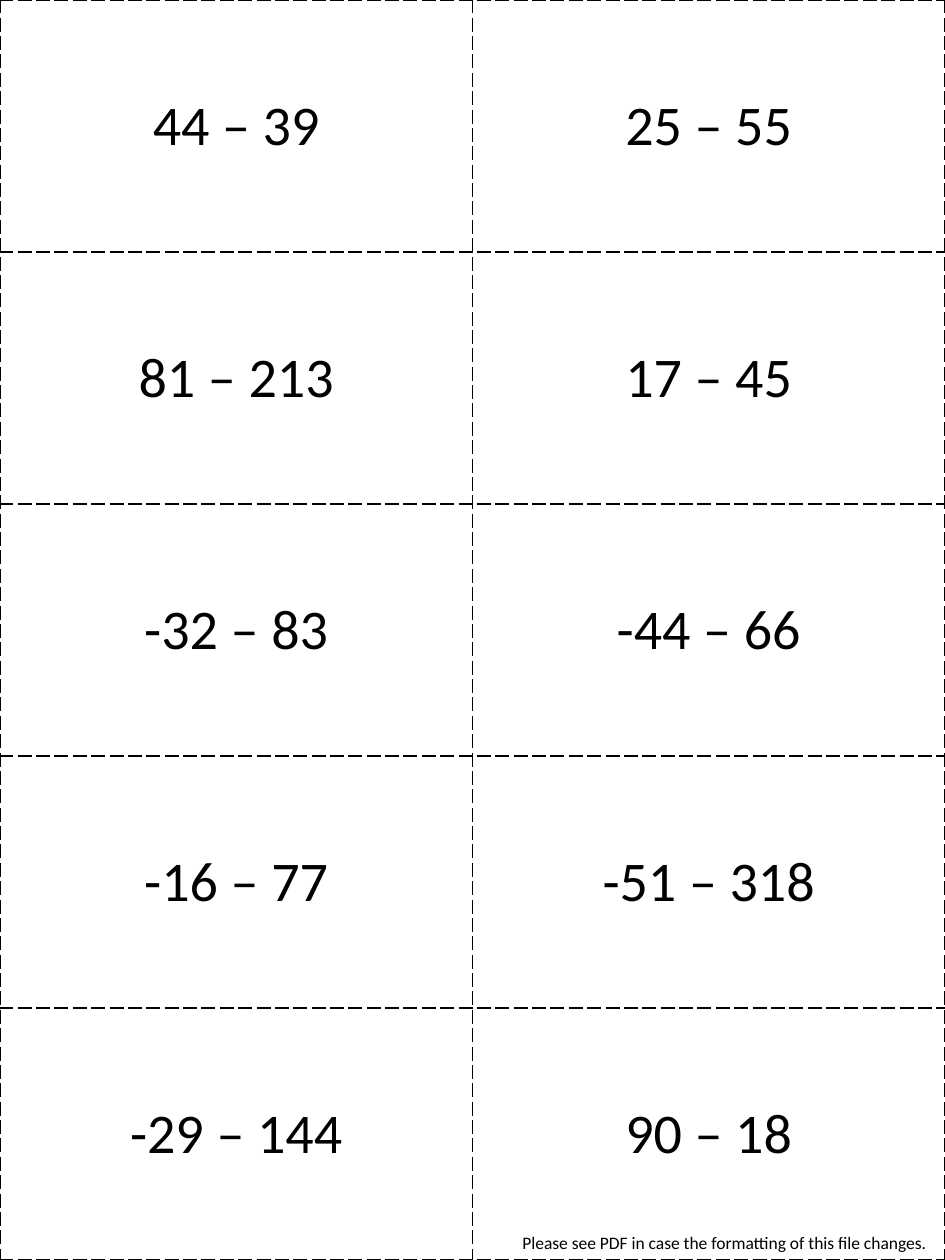
from dataclasses import dataclass

from lxml import etree
from pptx import Presentation
from pptx.dml.color import RGBColor
from pptx.enum.text import MSO_ANCHOR, MSO_AUTO_SIZE, PP_ALIGN
from pptx.oxml.ns import qn
from pptx.util import Emu, Pt

CENTER = PP_ALIGN.CENTER
LEFT = PP_ALIGN.LEFT
MIDDLE = MSO_ANCHOR.MIDDLE
FIT_SHAPE = MSO_AUTO_SIZE.SHAPE_TO_FIT_TEXT
BLANK_LAYOUT = 6
EMU_PER_PX = 914400 / 126
PAGE_WIDTH, PAGE_HEIGHT = 945, 1260

PROBLEMS = [
    ("44 – 39", "25 – 55"),
    ("81 – 213", "17 – 45"),
    ("-32 – 83", "-44 – 66"),
    ("-16 – 77", "-51 – 318"),
    ("-29 – 144", "90 – 18"),
]
FOOTNOTE = "Please see PDF in case the formatting of this file changes."


@dataclass(frozen=True)
class Theme:
    font: str = "Calibri"
    ink: str = "000000"
    problem_size: int = 32
    note_size: int = 10
    border_width: int = 1
    border_dash: str = "lgDash"


def px(length):
    return Emu(round(length * EMU_PER_PX))


def write_text(text_frame, text, *, font, size, color, align=LEFT):
    paragraph = text_frame.paragraphs[0]
    paragraph.alignment = align
    run = paragraph.add_run()
    run.text = text
    run.font.name = font
    run.font.size = Pt(size)
    run.font.color.rgb = RGBColor.from_string(color)


class CardSheet:
    def __init__(self, slide, theme):
        self.slide = slide
        self.theme = theme

    def add_borders(self, cell):
        properties = cell._tc.get_or_add_tcPr()
        for side in ("lnL", "lnR", "lnT", "lnB"):
            line = etree.SubElement(properties, qn(f"a:{side}"))
            line.set("w", str(Pt(self.theme.border_width)))
            fill = etree.SubElement(line, qn("a:solidFill"))
            etree.SubElement(fill, qn("a:srgbClr")).set("val", self.theme.ink)
            etree.SubElement(line, qn("a:prstDash")).set("val", self.theme.border_dash)

    def add_cards(self, problems, left, top, width, height):
        row_count, column_count = len(problems), len(problems[0])
        table = self.slide.shapes.add_table(
            row_count, column_count, px(left), px(top), px(width), px(height)
        ).table
        table.first_row = False
        table.horz_banding = False
        for column in table.columns:
            column.width = px(width / column_count)
        for row, texts in zip(table.rows, problems):
            row.height = px(height / row_count)
            for cell, text in zip(row.cells, texts):
                self.add_borders(cell)
                cell.fill.background()
                cell.vertical_anchor = MIDDLE
                write_text(cell.text_frame, text, font=self.theme.font,
                           size=self.theme.problem_size, color=self.theme.ink, align=CENTER)

    def add_note(self, text, left, top, width, height):
        shape = self.slide.shapes.add_textbox(px(left), px(top), px(width), px(height))
        text_frame = shape.text_frame
        text_frame.word_wrap = False
        text_frame.auto_size = FIT_SHAPE
        write_text(text_frame, text, font=self.theme.font,
                   size=self.theme.note_size, color=self.theme.ink)


def main():
    presentation = Presentation()
    presentation.slide_width = px(PAGE_WIDTH)
    presentation.slide_height = px(PAGE_HEIGHT)
    slide = presentation.slides.add_slide(presentation.slide_layouts[BLANK_LAYOUT])
    sheet = CardSheet(slide, Theme())
    sheet.add_cards(PROBLEMS, 0, 0, PAGE_WIDTH, PAGE_HEIGHT)
    sheet.add_note(FOOTNOTE, 510, 1226, 435, 34)
    presentation.save("out.pptx")


if __name__ == "__main__":
    main()
